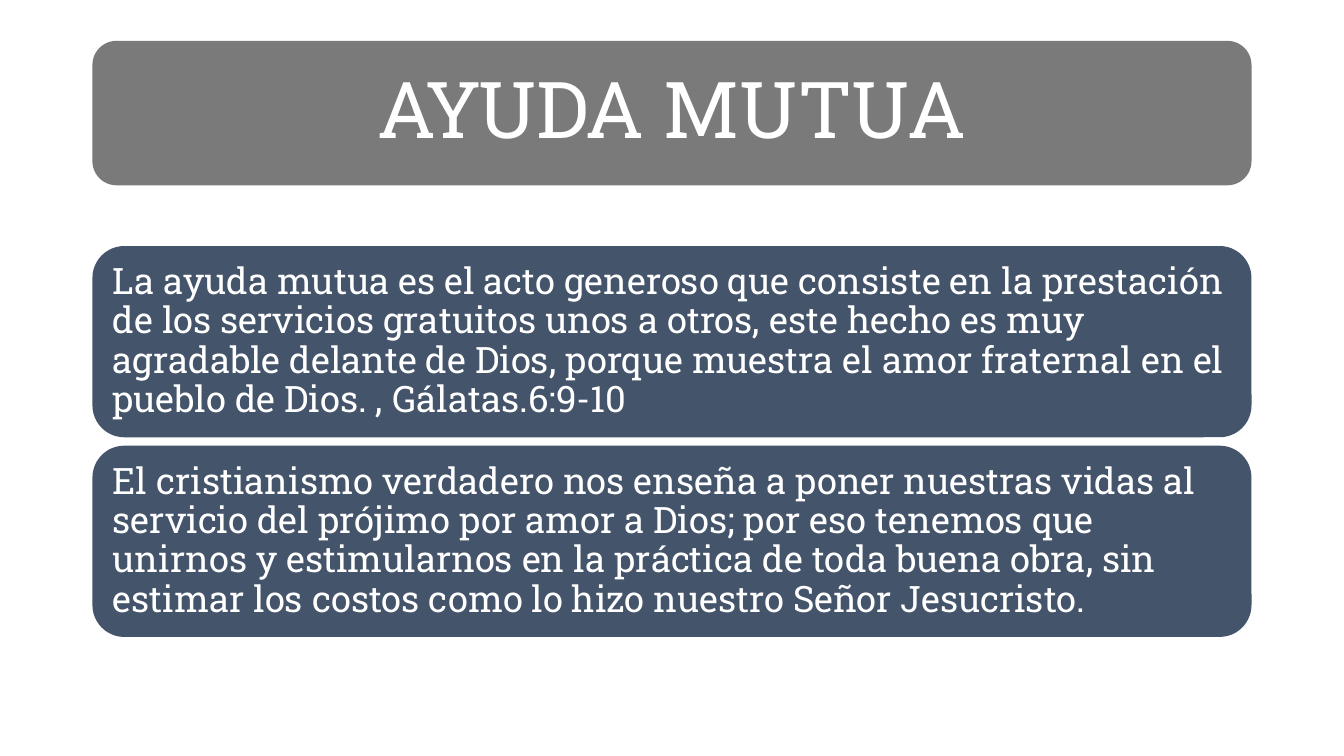
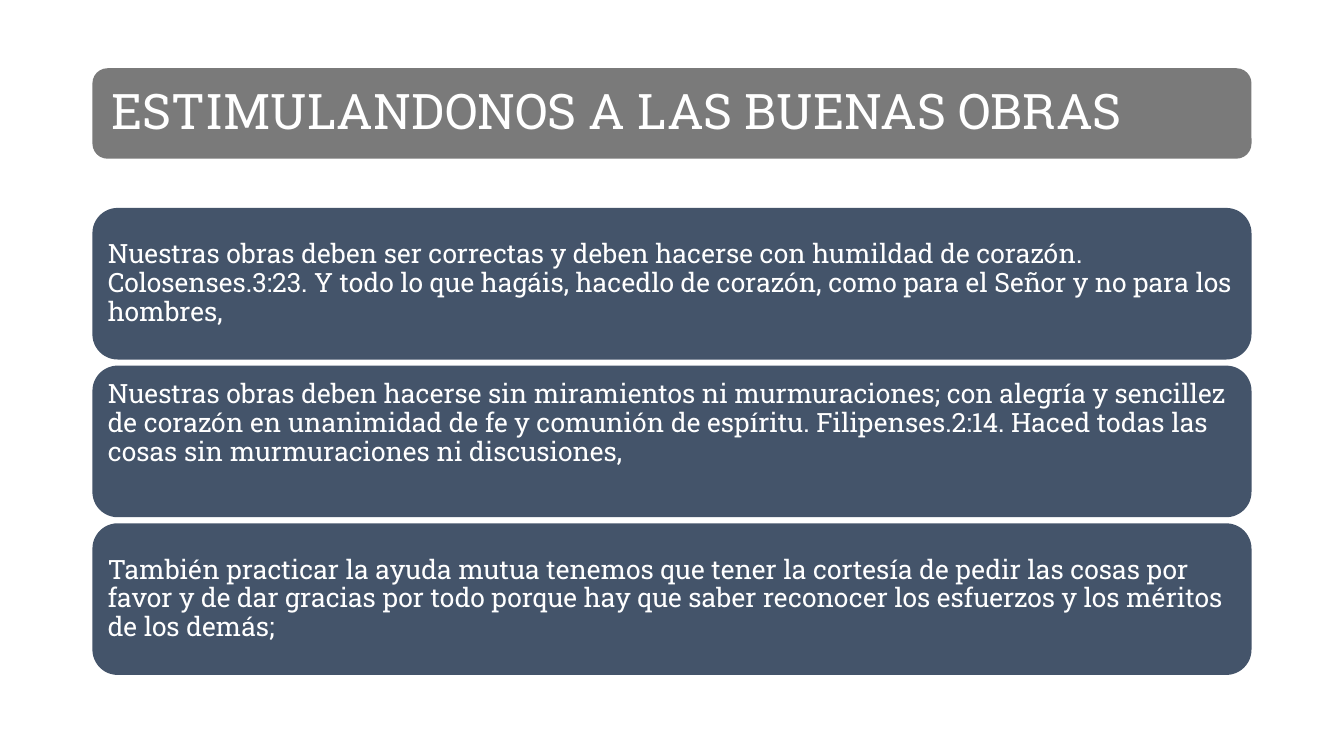
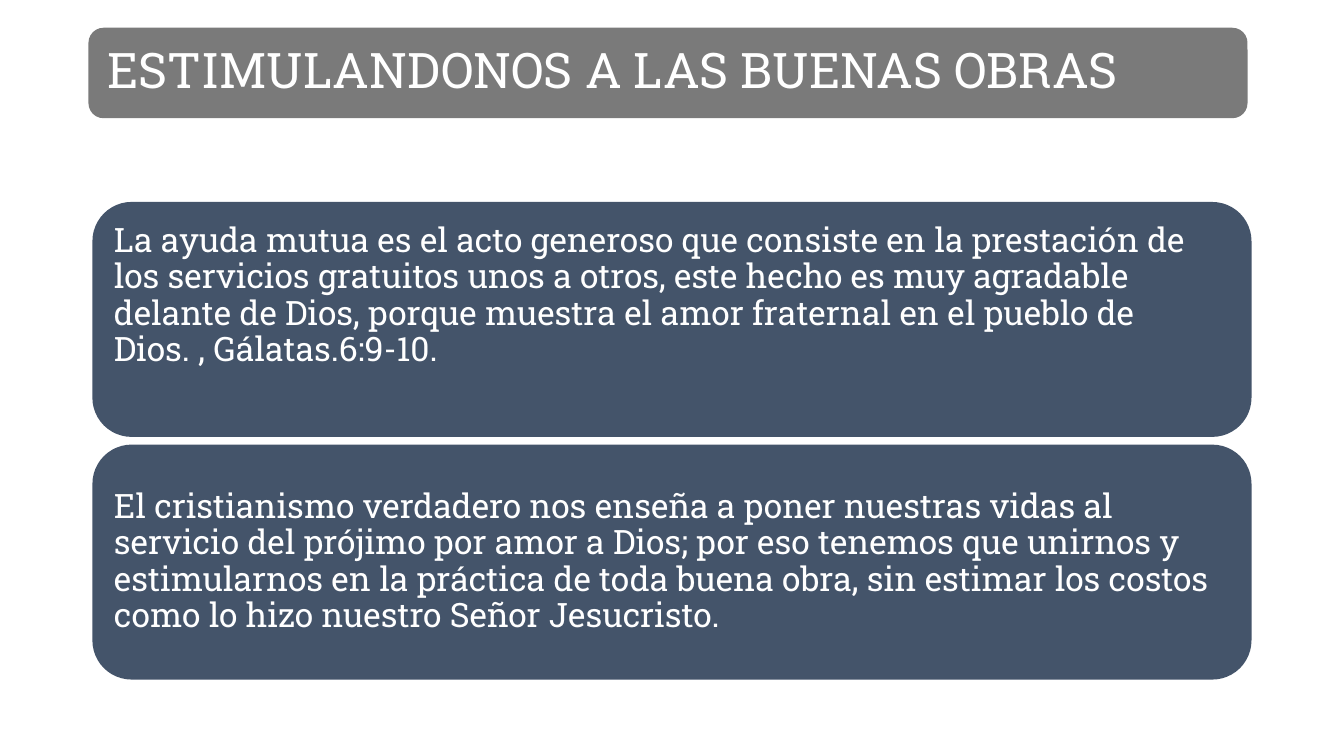
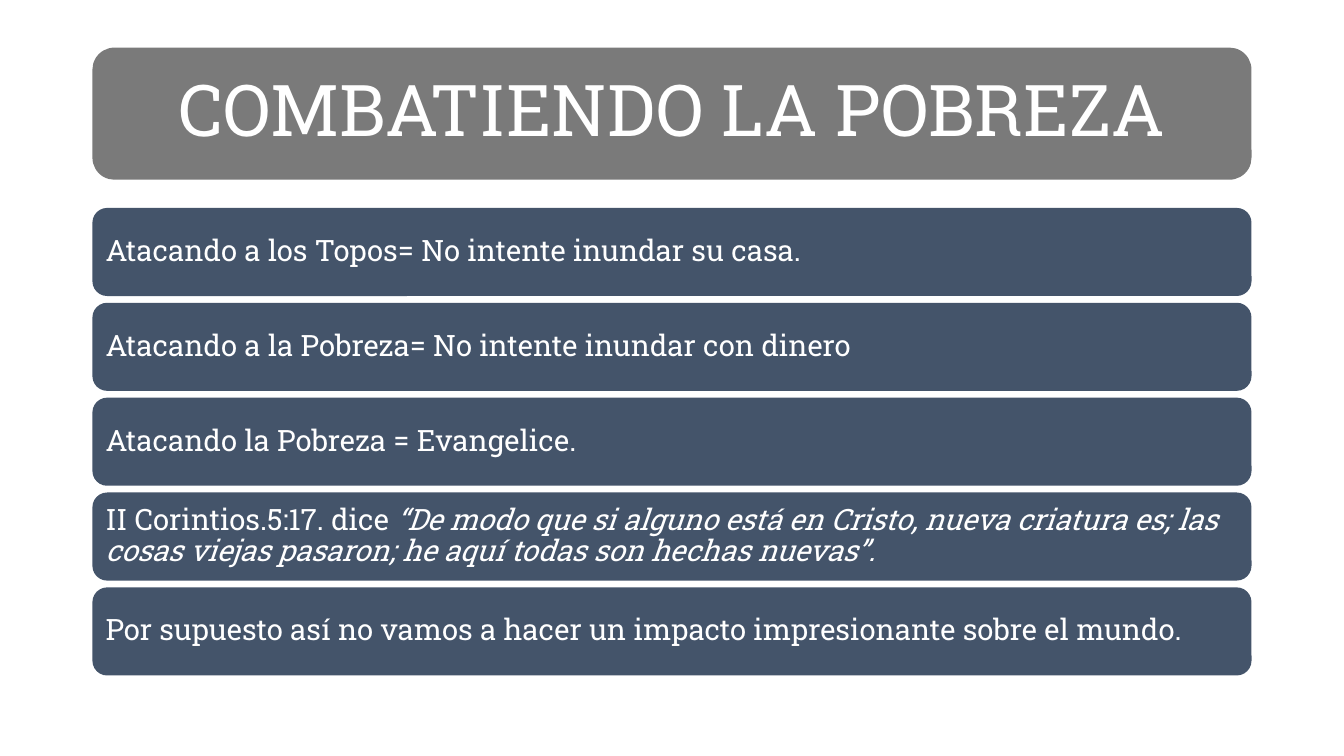
import pptx
import pptx.dml.color
import pptx.enum.shapes
import pptx.enum.text
import pptx.util

Cm, Pt = pptx.util.Cm, pptx.util.Pt
ALIGN = pptx.enum.text.PP_ALIGN
ANCHOR = pptx.enum.text.MSO_ANCHOR

FONT = "Roboto Slab"
COLOURS = {"title": "7A7A7A", "panel": "44546A", "text": "FFFFFF"}
LEFT, WIDTH = 2.33, 29.21
INSET_RATIO = 0.3  # inset and gap both follow the text size
GAP_RATIO = 0.23

MUTUAL_AID = (
    "La ayuda mutua es el acto generoso que consiste en la prestación de los servicios "
    "gratuitos unos a otros, este hecho es muy agradable delante de Dios, porque muestra "
    "el amor fraternal en el pueblo de Dios. , Gálatas.6:9-10"
)
TRUE_FAITH = (
    "El cristianismo verdadero nos enseña a poner nuestras vidas al servicio del prójimo "
    "por amor a Dios; por eso tenemos que unirnos y estimularnos en la práctica de toda "
    "buena obra, sin estimar los costos como lo hizo nuestro Señor Jesucristo."
)
GOOD_WORKS = "ESTIMULANDONOS A LAS BUENAS OBRAS"

# Panel texts are strings, or lists of (text, italic) runs; "raised" panels hold text at the top.
SLIDES = [
    {
        "title": {"text": "AYUDA MUTUA", "top": 1.03, "height": 3.64, "size": 56,
                  "align": ALIGN.CENTER},
        "panels": {"top": 6.2, "height": 4.82, "size": 26},
        "texts": [MUTUAL_AID, TRUE_FAITH],
    },
    {
        "title": {"text": GOOD_WORKS, "top": 1.72, "height": 2.28, "size": 35},
        "panels": {"top": 5.24, "height": 3.82, "size": 19},
        "texts": [
            "Nuestras obras deben ser correctas y deben hacerse con humildad de corazón. "
            "Colosenses.3:23. Y todo lo que hagáis, hacedlo de corazón, como para el Señor "
            "y no para los hombres,",
            "Nuestras obras deben hacerse sin miramientos ni murmuraciones; con alegría y "
            "sencillez de corazón en unanimidad de fe y comunión de espíritu. "
            "Filipenses.2:14. Haced todas las cosas sin murmuraciones ni discusiones,",
            "También practicar la ayuda mutua tenemos que tener la cortesía de pedir las "
            "cosas por favor y de dar gracias por todo porque hay que saber reconocer los "
            "esfuerzos y los méritos de los demás;",
        ],
        "raised": [1],
    },
    {
        "title": {"text": GOOD_WORKS, "top": 0.7, "height": 2.28, "size": 35, "left": 2.23},
        "panels": {"top": 5.09, "height": 5.92, "size": 24},
        "texts": [MUTUAL_AID + ".", TRUE_FAITH],
        "raised": [0],
    },
    {
        "title": {"text": "COMBATIENDO LA POBREZA", "top": 1.2, "height": 3.33, "size": 51,
                  "align": ALIGN.CENTER},
        "panels": {"top": 5.24, "height": 2.22, "size": 21},
        "texts": [
            "Atacando a los Topos= No intente inundar su casa.",
            "Atacando a la Pobreza= No intente inundar con dinero",
            "Atacando la Pobreza = Evangelice.",
            [("II Corintios.5:17. dice ", False),
             ("“De modo que si alguno está en Cristo, nueva criatura es; las cosas viejas "
              "pasaron; he aquí todas son hechas nuevas”.", True)],
            "Por supuesto así no vamos a hacer un impacto impresionante sobre el mundo.",
        ],
    },
]


def rgb(name):
    return pptx.dml.color.RGBColor.from_string(COLOURS[name])


def write(tf, text, size, align=ALIGN.LEFT, anchor=ANCHOR.MIDDLE):
    tf.word_wrap = True
    tf.vertical_anchor = anchor
    tf.margin_left = tf.margin_right = tf.margin_top = tf.margin_bottom = Pt(INSET_RATIO * size)
    p = tf.paragraphs[0]
    p.alignment = align
    p.line_spacing = 0.9
    for run_text, italic in [(text, False)] if isinstance(text, str) else text:
        r = p.add_run()
        r.text = run_text
        r.font.name = FONT
        r.font.size = Pt(size)
        r.font.italic = italic
        r.font.color.rgb = rgb("text")


def add_box(slide, fill, text, top, height, size, left=LEFT, **text_format):
    sp = slide.shapes.add_shape(
        pptx.enum.shapes.MSO_SHAPE.ROUNDED_RECTANGLE,
        Cm(left), Cm(top), Cm(WIDTH), Cm(height))
    sp.shadow.inherit = False
    sp.fill.solid()
    sp.fill.fore_color.rgb = rgb(fill)
    sp.line.fill.background()
    write(sp.text_frame, text, size, **text_format)


def add_panels(slide, texts, top, height, size, raised=()):
    pitch = height + Pt(GAP_RATIO * size).cm
    for i, text in enumerate(texts):
        anchor = ANCHOR.TOP if i in raised else ANCHOR.MIDDLE
        add_box(slide, "panel", text, top + i * pitch, height, size, anchor=anchor)


def main():
    prs = pptx.Presentation()
    prs.slide_width, prs.slide_height = Cm(33.87), Cm(19.05)
    for content in SLIDES:
        slide = prs.slides.add_slide(prs.slide_layouts[6])
        add_box(slide, "title", **content["title"])
        add_panels(slide, content["texts"], raised=content.get("raised", ()),
                   **content["panels"])
    prs.save("out.pptx")


if __name__ == "__main__":
    main()
